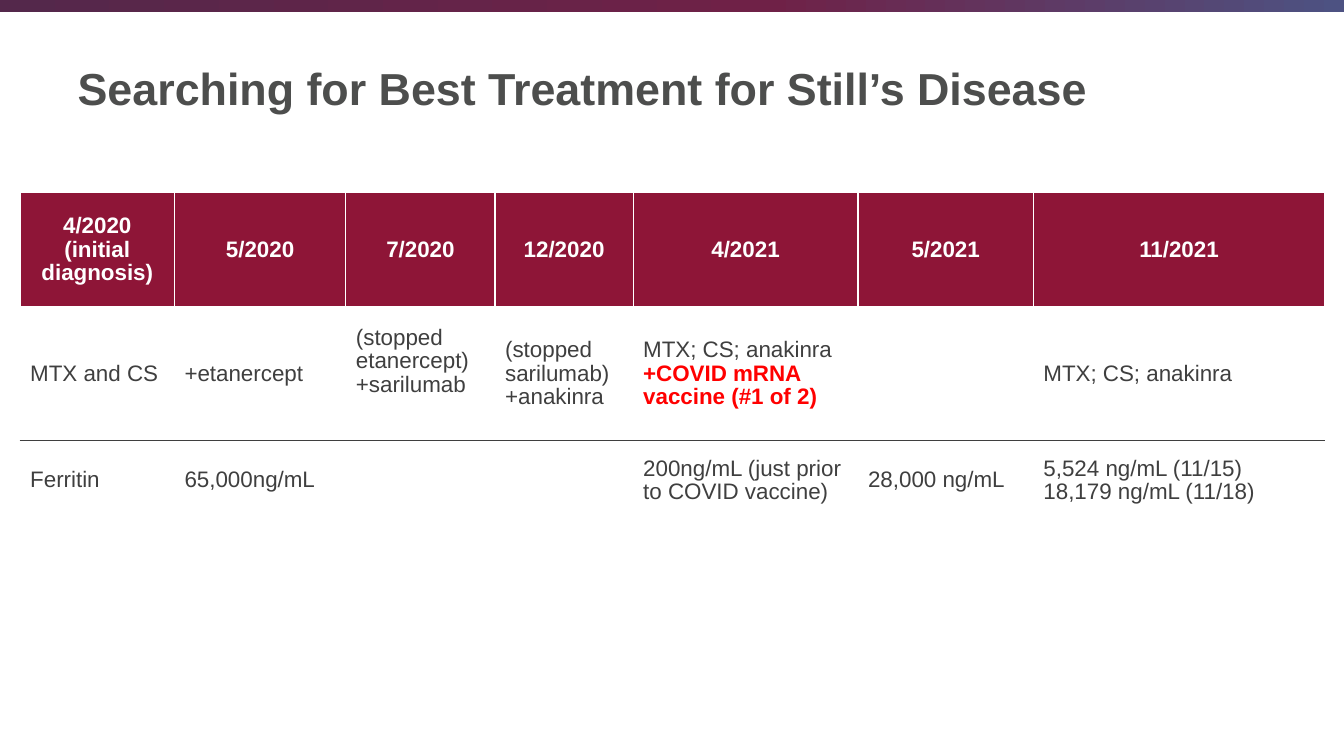
from copy import deepcopy

from lxml.etree import SubElement
from pptx import Presentation
from pptx.dml.color import RGBColor as RGB
from pptx.enum.shapes import MSO_SHAPE as SHAPE
from pptx.enum.text import MSO_ANCHOR as ANCHOR, MSO_AUTO_SIZE as AUTOSIZE, PP_ALIGN as ALIGN
from pptx.oxml.ns import qn
from pptx.util import Inches, Pt

COLORS = {
    "title": "4D4E4D",
    "header": "8E1537",
    "text": "3F3F3F",
    "alert": "FF0000",
    "white": "FFFFFF",
}
BAR_STOPS = [(0, "54284B"), (57, "6F2147"), (100, "4D5282")]
FONT = "Arial"
VACCINE = "+COVID mRNA vaccine (#1 of 2)"

COLUMNS = [1.53, 1.7, 1.48, 1.37, 2.23, 1.74, 2.89]
ROWS = [1.14, 1.32, 0.8]
DATES = [["4/2020 (initial", "diagnosis)"], ["5/2020"], ["7/2020"], ["12/2020"],
         ["4/2021"], ["5/2021"], ["11/2021"]]
TREATMENT = [["MTX and CS"], ["+etanercept"], ["(stopped etanercept)", "+sarilumab"],
             ["(stopped sarilumab)", "+anakinra"], ["MTX; CS; anakinra", VACCINE],
             [], ["MTX; CS; anakinra"]]
FERRITIN = [["Ferritin"], ["65,000ng/mL"], [], [],
            ["200ng/mL (just prior to COVID vaccine)"], ["28,000 ng/mL"],
            ["5,524 ng/mL (11/15)", "18,179 ng/mL (11/18)"]]


def write(p, text, size=16, color="text", bold=False, align=ALIGN.LEFT, spacing=0.95):
    p.alignment = align
    p.line_spacing = spacing
    r = p.add_run()
    r.text = text
    r.font.name = FONT
    r.font.size = Pt(size)
    r.font.bold = bold
    r.font.color.rgb = RGB.from_string(COLORS[color])


class Deck:
    def __init__(self):
        self.prs = Presentation()
        self.prs.slide_width, self.prs.slide_height = Inches(13.33), Inches(7.5)
        self.s = self.prs.slides.add_slide(self.prs.slide_layouts[5])

    def bar(self, x, y, w, h, stops):
        sp = self.s.shapes.add_shape(SHAPE.RECTANGLE, Inches(x), Inches(y), Inches(w), Inches(h))
        sp.shadow.inherit = False
        sp.line.fill.background()
        sp.fill.gradient()
        sp.fill.gradient_angle = 0
        first = sp.fill.gradient_stops[0]
        first.color.rgb = RGB.from_string(stops[0][1])
        gs_list = sp._element.spPr.find(qn("a:gradFill")).find(qn("a:gsLst"))
        sample = deepcopy(gs_list[0])
        for gs in list(gs_list):
            gs_list.remove(gs)
        for position, color in stops:
            gs = deepcopy(sample)
            gs.set("pos", str(position * 1000))
            gs.find(qn("a:srgbClr")).set("val", color)
            gs_list.append(gs)

    def title(self, text, x, y, w, h):
        sp = self.s.shapes.title
        sp.left, sp.top, sp.width, sp.height = Inches(x), Inches(y), Inches(w), Inches(h)
        tf = sp.text_frame
        tf.word_wrap = True
        tf.auto_size = AUTOSIZE.NONE
        tf.vertical_anchor = ANCHOR.MIDDLE
        write(tf.paragraphs[0], text, size=32, color="title", bold=True, spacing=1)

    def borders(self, cell, top, bottom):
        sides = {"L": ("white", 1), "R": ("white", 1), "T": top, "B": bottom}
        tc_pr = cell._tc.get_or_add_tcPr()
        for side, (color, width) in sides.items():
            ln = SubElement(tc_pr, qn(f"a:ln{side}"), w=str(Pt(width)))
            fill = SubElement(ln, qn("a:solidFill"))
            SubElement(fill, qn("a:srgbClr"), val=COLORS[color])

    def cell(self, cell, lines, header, top, bottom):
        cell.vertical_anchor = ANCHOR.MIDDLE
        self.borders(cell, top, bottom)
        if header:
            cell.fill.solid()
            cell.fill.fore_color.rgb = RGB.from_string(COLORS["header"])
        else:
            cell.fill.background()
        tf = cell.text_frame
        for i, line in enumerate(lines):
            p = tf.add_paragraph() if i else tf.paragraphs[0]
            if header:
                write(p, line, color="white", bold=True, align=ALIGN.CENTER)
            elif line == VACCINE:
                write(p, line, color="alert", bold=True)
            else:
                write(p, line)

    def table(self, x, y, columns, heights, rows):
        table = self.s.shapes.add_table(len(rows), len(columns), Inches(x), Inches(y),
                                        Inches(sum(columns)), Inches(sum(heights))).table
        table.horz_banding = False
        for column, width in zip(table.columns, columns):
            column.width = Inches(width)
        for row, height in zip(table.rows, heights):
            row.height = Inches(height)
        rules = [("white", 1), ("white", 3), ("text", 1.5), ("white", 1)]
        for i, row in enumerate(rows):
            for j, lines in enumerate(row):
                self.cell(table.cell(i, j), lines, i == 0, rules[i], rules[i + 1])
        return table


def main():
    deck = Deck()
    deck.bar(0, 0, 13.33, 0.12, BAR_STOPS)
    deck.title("Searching for Best Treatment for Still’s Disease", 0.67, 0.22, 11.75, 1.3)
    table = deck.table(0.2, 1.91, COLUMNS, ROWS, [DATES, TREATMENT, FERRITIN])
    table.cell(1, 2).margin_bottom = Inches(0.29)
    deck.prs.save("out.pptx")


if __name__ == "__main__":
    main()
